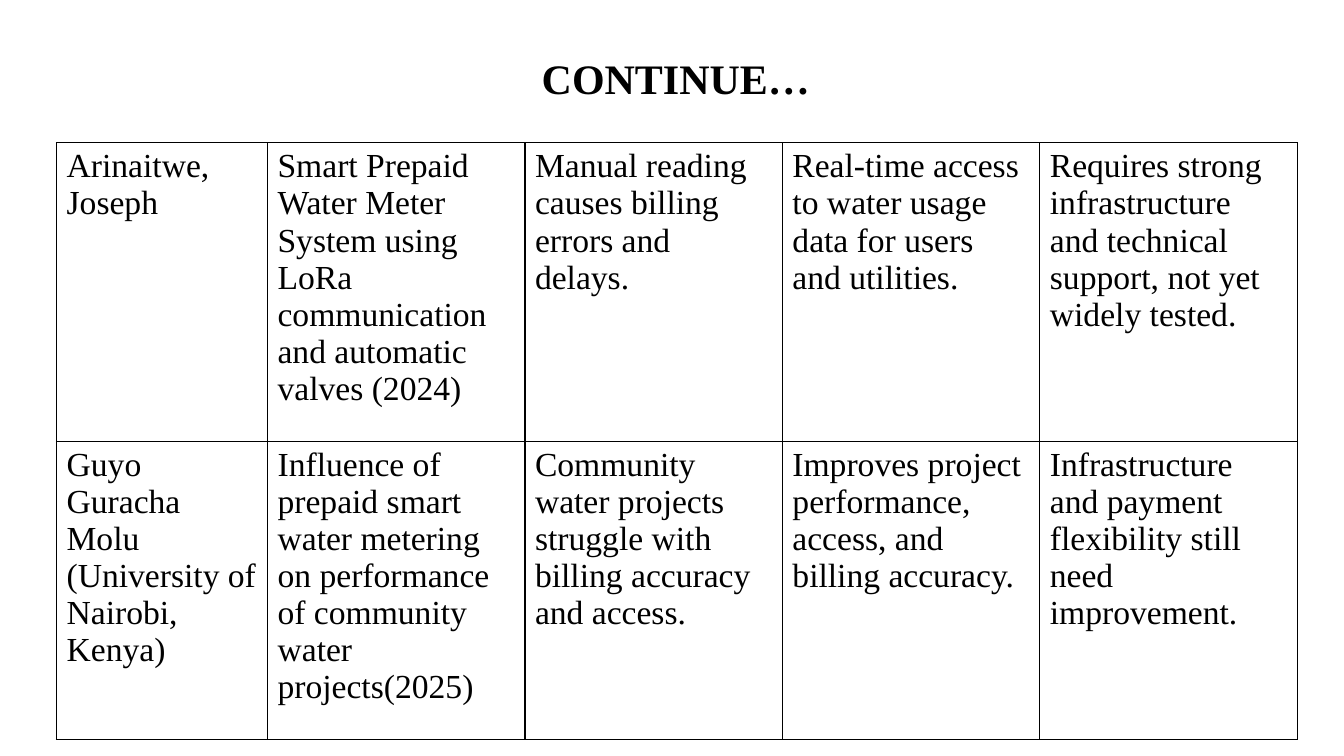
from lxml.etree import SubElement
from pptx import Presentation
from pptx.dml.color import RGBColor as Rgb
from pptx.enum.text import MSO_ANCHOR as Anchor, PP_ALIGN as Align
from pptx.oxml.ns import qn
from pptx.util import Pt

COLORS = {"ink": "000000", "paper": "FFFFFF"}
FONT = "Times New Roman"
TITLE = {"name": FONT, "size": Pt(30), "bold": True}
BODY = {"name": FONT, "size": Pt(24), "bold": False}
WIDTHS = [150.7] + [183.9] * 4
HEIGHT = 213.1
STUDIES = [
    ["Arinaitwe, Joseph",
     "Smart Prepaid Water Meter System using LoRa communication and automatic valves (2024)",
     "Manual reading causes billing errors and delays.",
     "Real-time access to water usage data for users and utilities.",
     "Requires strong infrastructure and technical support, not yet widely tested."],
    ["Guyo Guracha Molu (University of Nairobi, Kenya)",
     "Influence of prepaid smart water metering on performance of community water projects(2025)",
     "Community water projects struggle with billing accuracy and access.",
     "Improves project performance, access, and billing accuracy.",
     "Infrastructure and payment flexibility still need improvement."],
]


def style(font, form):
    for key, value in form.items():
        setattr(font, key, value)
    font.color.rgb = Rgb.from_string(COLORS["ink"])


def add_title(slide, text):
    title = slide.shapes.title
    box = {"left": 71.3, "top": 28.8, "width": 823, "height": 57.6}
    for key, value in box.items():
        setattr(title, key, Pt(value))
    frame = title.text_frame
    frame.text = text
    frame.vertical_anchor = Anchor.MIDDLE
    para = frame.paragraphs[0]
    para.alignment = Align.CENTER
    para.line_spacing = 0.9
    style(para.runs[0].font, TITLE)


def add_edges(cell):
    props = cell._tc.get_or_add_tcPr()
    for index, side in enumerate(("lnL", "lnR", "lnT", "lnB")):
        line = props.makeelement(qn(f"a:{side}"), {"w": str(Pt(1))})
        props.insert(index, line)
        fill = SubElement(line, qn("a:solidFill"))
        SubElement(fill, qn("a:srgbClr"), val=COLORS["ink"])


def fill_cell(cell, text):
    cell.text = text
    cell.fill.solid()
    cell.fill.fore_color.rgb = Rgb.from_string(COLORS["paper"])
    style(cell.text_frame.paragraphs[0].runs[0].font, BODY)
    add_edges(cell)


def add_grid(slide, rows):
    frame = slide.shapes.add_table(
        len(rows), len(WIDTHS), Pt(40.4), Pt(102),
        Pt(sum(WIDTHS)), Pt(HEIGHT * len(rows)))
    table = frame.table
    table.first_row = table.horz_banding = False
    for col, width in zip(table.columns, WIDTHS):
        col.width = Pt(width)
    for row, texts in zip(table.rows, rows):
        row.height = Pt(HEIGHT)
        for cell, text in zip(row.cells, texts):
            fill_cell(cell, text)


def main():
    deck = Presentation()
    deck.slide_width, deck.slide_height = Pt(960), Pt(540)
    slide = deck.slides.add_slide(deck.slide_layouts[5])
    add_title(slide, "CONTINUE…")
    add_grid(slide, STUDIES)
    deck.save("out.pptx")


if __name__ == "__main__":
    main()
